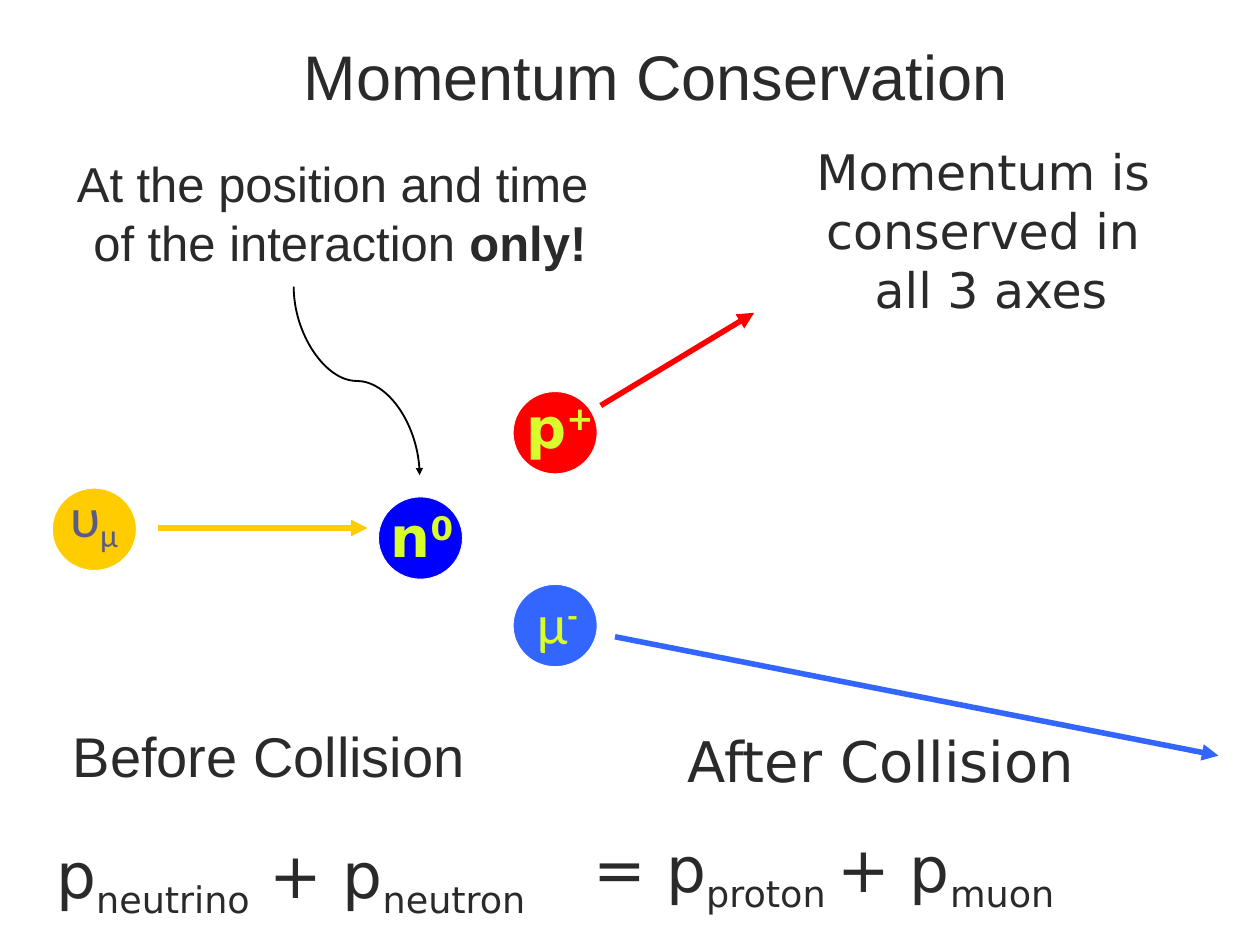
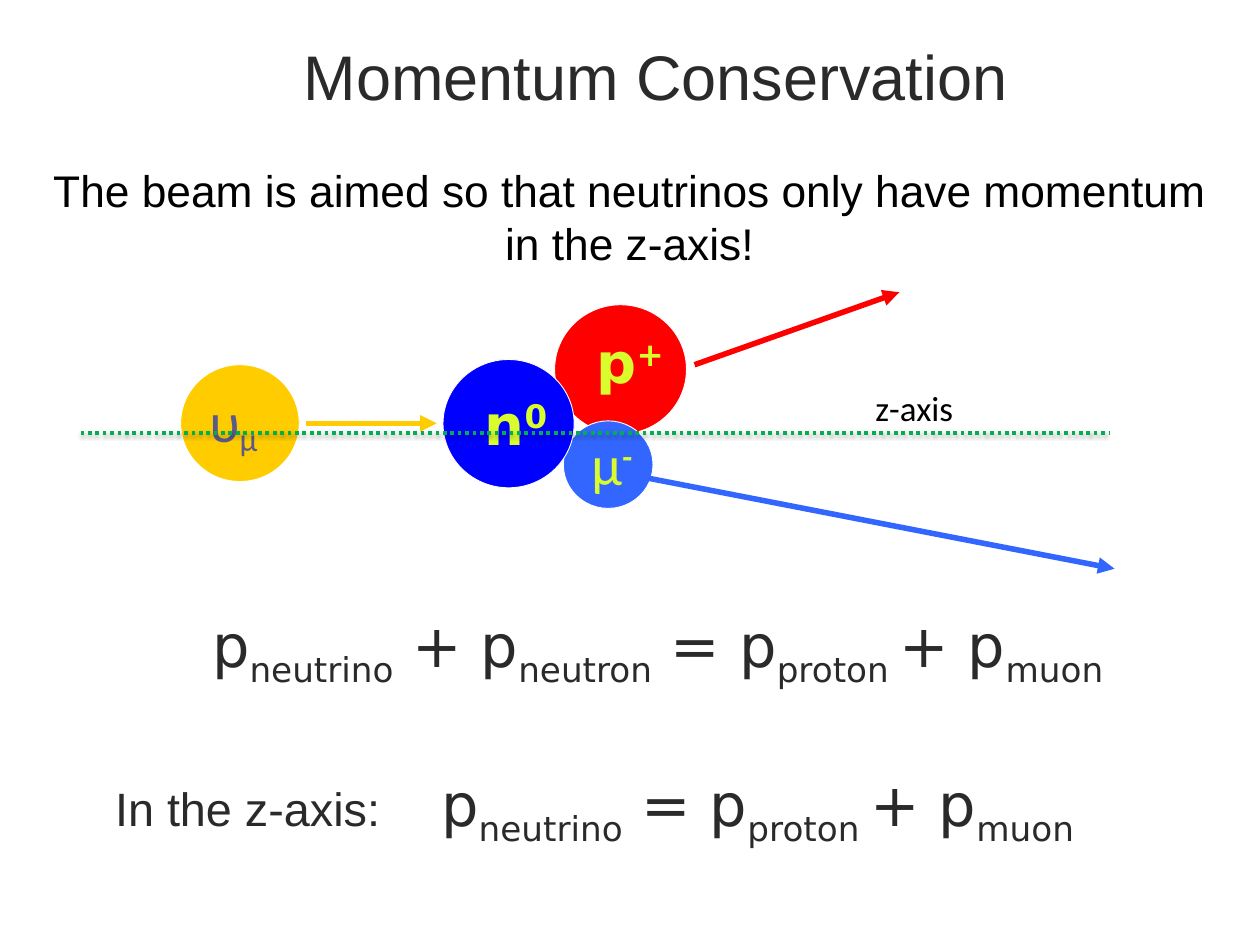
from lxml.etree import SubElement
from pptx import Presentation
from pptx.dml.color import RGBColor
from pptx.enum.dml import MSO_LINE
from pptx.enum.shapes import MSO_CONNECTOR, MSO_SHAPE
from pptx.enum.text import MSO_ANCHOR, MSO_AUTO_SIZE, PP_ALIGN
from pptx.oxml.ns import qn
from pptx.util import Cm, Pt

# Shared look
DARK, BLACK, WHITE, GREEN = "2A2A2A", "000000", "FFFFFF", "00B050"
YELLOW, RED, NAVY, BLUE = "FFCC00", "FF0000", "0000FF", "3366FF"
LIME, GREY = "D9FC2C", "5B5B89"
ARIAL, DEJAVU, CALIBRI = "Arial", "DejaVu Sans", "Calibri"
SUB, SUPER = -25, 31
TITLE = "Momentum Conservation"

# Particle: fill, label runs, label format
PARTICLES = {
    "neutrino": (YELLOW, [("υ", {}), ("μ", {"baseline": -17})],
                 {"name": CALIBRI, "color": GREY}),
    "neutron": (NAVY, [("n", {}), ("0", {"baseline": SUPER})],
                {"name": DEJAVU, "color": LIME, "bold": True}),
    "proton": (RED, [("p", {}), ("+", {"baseline": SUPER})],
               {"name": DEJAVU, "color": LIME, "bold": True}),
    "muon": (BLUE, [("μ", {}), ("-", {"baseline": SUPER, "bold": True})],
             {"name": CALIBRI, "color": LIME}),
}


def rgb(color):
    return RGBColor.from_string(color)


def formula(*parts):
    """Runs that alternate between the base line and a subscript."""
    return [(text, {"baseline": SUB} if index % 2 else {})
            for index, text in enumerate(parts)]


def add_run(para, text, style):
    run = para.add_run()
    run.text = text
    for key, value in style.items():
        if key == "color":
            run.font.color.rgb = rgb(value)
        elif key == "baseline":
            run._r.get_or_add_rPr().set("baseline", str(value * 1000))
        elif key == "size":
            run.font.size = Pt(value)
        else:
            setattr(run.font, key, value)


def write_text(box, paragraphs, style, inset=(0.18, 0.18), wrap=False, grow=True):
    """Fill a box with paragraphs, each a list of (text, format) runs."""
    frame = box.text_frame
    side, top = (Cm(value) for value in inset)
    settings = {
        "margin_left": side, "margin_right": side,
        "margin_top": top, "margin_bottom": top,
        "word_wrap": wrap, "vertical_anchor": MSO_ANCHOR.TOP,
        "auto_size": MSO_AUTO_SIZE.SHAPE_TO_FIT_TEXT if grow else MSO_AUTO_SIZE.NONE,
    }
    for key, value in settings.items():
        setattr(frame, key, value)
    for index, runs in enumerate(paragraphs):
        para = frame.add_paragraph() if index else frame.paragraphs[0]
        para.alignment = PP_ALIGN.CENTER
        for text, extra in runs:
            add_run(para, text, {**style, **extra})


def add_text(page, place, paragraphs, size, name, color=DARK, **options):
    box = page.shapes.add_textbox(*(Cm(value) for value in place))
    write_text(box, paragraphs, {"size": size, "name": name, "color": color}, **options)
    return box


def add_page(deck):
    """Title-only page with the shared title."""
    page = deck.slides.add_slide(deck.slide_layouts[5])
    title = page.shapes.title
    place = {"left": 8.43, "top": 0.94, "width": 20.75, "height": 2.44}
    for key, value in place.items():
        setattr(title, key, Cm(value))
    write_text(title, [[(TITLE, {})]],
               {"size": 51.2, "name": ARIAL, "color": DARK}, inset=(0.18, 0.13))
    return page


def add_particle(page, kind, circle, label, fixed=False):
    fill, runs, style = PARTICLES[kind]
    ball = page.shapes.add_shape(MSO_SHAPE.OVAL, *(Cm(value) for value in circle))
    ball.shadow.inherit = False
    ball.fill.solid()
    ball.fill.fore_color.rgb = rgb(fill)
    ball.line.color.rgb = rgb(WHITE)
    ball.line.width = Pt(0.75)
    box = page.shapes.add_textbox(*(Cm(value) for value in label))
    write_text(box, [runs], {"size": 45.5, **style}, wrap=fixed, grow=not fixed)


def add_line(page, points, color, width=4.5, arrow=True, kind=MSO_CONNECTOR.STRAIGHT):
    line = page.shapes.add_connector(kind, *(Cm(value) for value in points))
    line.line.color.rgb = rgb(color)
    line.line.width = Pt(width)
    if arrow:
        SubElement(line.line._get_or_add_ln(), qn("a:tailEnd"), type="triangle")
    SubElement(line._element.spPr, qn("a:effectLst"))
    return line


def add_axis(page):
    """Dotted z-axis with a soft shadow, and its name."""
    axis = add_line(page, (2.31, 12.42, 31.78, 12.42), GREEN, 3, arrow=False)
    axis.line.dash_style = MSO_LINE.ROUND_DOT
    effects = axis._element.spPr.find(qn("a:effectLst"))
    shadow = SubElement(effects, qn("a:outerShdw"), blurRad=str(Pt(3)),
                        dist=str(Pt(1.6)), dir="5400000", rotWithShape="0")
    shade = SubElement(shadow, qn("a:srgbClr"), val=BLACK)
    SubElement(shade, qn("a:alpha"), val="38000")
    add_text(page, (24.89, 10.92, 2.64, 1.57), [[("z-axis", {})]], 28.4, CALIBRI, BLACK)


def build_collision(deck):
    page = add_page(deck)
    add_text(page, (0.13, 4.27, 19.23, 3.66),
             [[("At the position and time ", {})],
              [("of the interaction ", {}), ("only!", {"bold": True})]],
             39.8, ARIAL, inset=(0.18, 0.13), wrap=True)
    lines = ("Momentum is ", "conserved in ", "all 3 axes")
    add_text(page, (22.61, 4.06, 11.61, 5.11), [[(text, {})] for text in lines],
             39.8, DEJAVU, inset=(0, 0), wrap=True)

    # Particles, all of one size
    for kind, left, top, label in (
            ("neutrino", 1.5, 14, (1.78, 13.64, 1.83, 2.31)),
            ("neutron", 10.85, 14.25, (10.95, 14.2, 2.29, 2.31)),
            ("proton", 14.71, 11.23, (14.83, 11.07, 2.44, 2.31)),
            ("muon", 14.71, 16.76, (15.19, 16.71, 1.57, 2.31))):
        add_particle(page, kind, (left, top, 2.41, 2.36), label)

    # Arrows
    add_line(page, (4.52, 15.14, 10.54, 15.14), YELLOW)
    add_line(page, (17.22, 11.63, 21.62, 8.97), RED)
    add_line(page, (17.63, 18.26, 34.93, 21.67), BLUE)
    pointer = add_line(page, (12.93, 9.12, 7.52, 12.73), BLACK, 1.5,
                       kind=MSO_CONNECTOR.CURVE)
    pointer._element.spPr.find(qn("a:xfrm")).set("rot", "16200000")

    # Captions and momentum sums
    for place, runs, size, name in (
            ((1.85, 20.52, 11.71, 2.31), [("Before Collision", {})], 45.5, ARIAL),
            ((19.43, 20.65, 11.66, 2.31), [("After Collision", {})], 45.5, DEJAVU),
            ((0.69, 23.77, 15.29, 2.57),
             formula("p", "neutrino", " + p", "neutron"), 51.2, DEJAVU),
            ((16.21, 23.6, 14.81, 2.57),
             formula("= p", "proton ", "+ p", "muon"), 51.2, DEJAVU)):
        add_text(page, place, [runs], size, name)


def build_beam(deck):
    page = add_page(deck)
    text = "The beam is aimed so that neutrinos only have momentum in the z-axis!"
    add_text(page, (0.71, 4.55, 34.67, 3.33), [[(text, {})]], 36, ARIAL, BLACK,
             inset=(0.18, 0.13), wrap=True)

    # Particles, from back to front
    for kind, circle, label in (
            ("proton", (15.9, 8.74, 3.78, 3.71), (16.84, 9.22, 2.46, 2.29)),
            ("muon", (16.15, 12.07, 2.57, 2.51), (16.46, 12.14, 2.16, 1.65)),
            ("neutrino", (5.18, 10.46, 3.4, 3.35), (5.56, 10.9, 2.26, 2.03)),
            ("neutron", (12.7, 10.31, 3.76, 3.68), (13.64, 11, 2.31, 2.29))):
        add_particle(page, kind, circle, label, fixed=True)

    # Arrows and axis
    add_line(page, (8.76, 12.14, 12.52, 12.14), YELLOW)
    add_line(page, (19.91, 10.46, 25.78, 8.38), RED)
    add_line(page, (18.36, 13.67, 31.95, 16.31), BLUE)
    add_axis(page)

    # Momentum sums
    after = (" = p", "proton ", "+ p", "muon")
    add_text(page, (4.62, 17.32, 28.47, 2.31),
             [formula("p", "neutrino", " + p", "neutron", *after)],
             48, DEJAVU, inset=(0.18, 0.13))
    caption = ("In the z-axis:\t", {"size": 38, "name": ARIAL})
    box = add_text(page, (3.12, 21.89, 29.87, 2.31),
                   [[caption] + formula("p", "neutrino", *after)],
                   48, DEJAVU, inset=(0.18, 0.13), wrap=True)
    para = box.text_frame.paragraphs[0]
    para.alignment = PP_ALIGN.LEFT
    tabs = SubElement(para._p.get_or_add_pPr(), qn("a:tabLst"))
    SubElement(tabs, qn("a:tab"), pos=str(Cm(9.35)), algn="l")


def main():
    deck = Presentation()
    deck.slide_width, deck.slide_height = Cm(36.12), Cm(27.1)
    build_collision(deck)
    build_beam(deck)
    deck.save("out.pptx")


if __name__ == "__main__":
    main()
